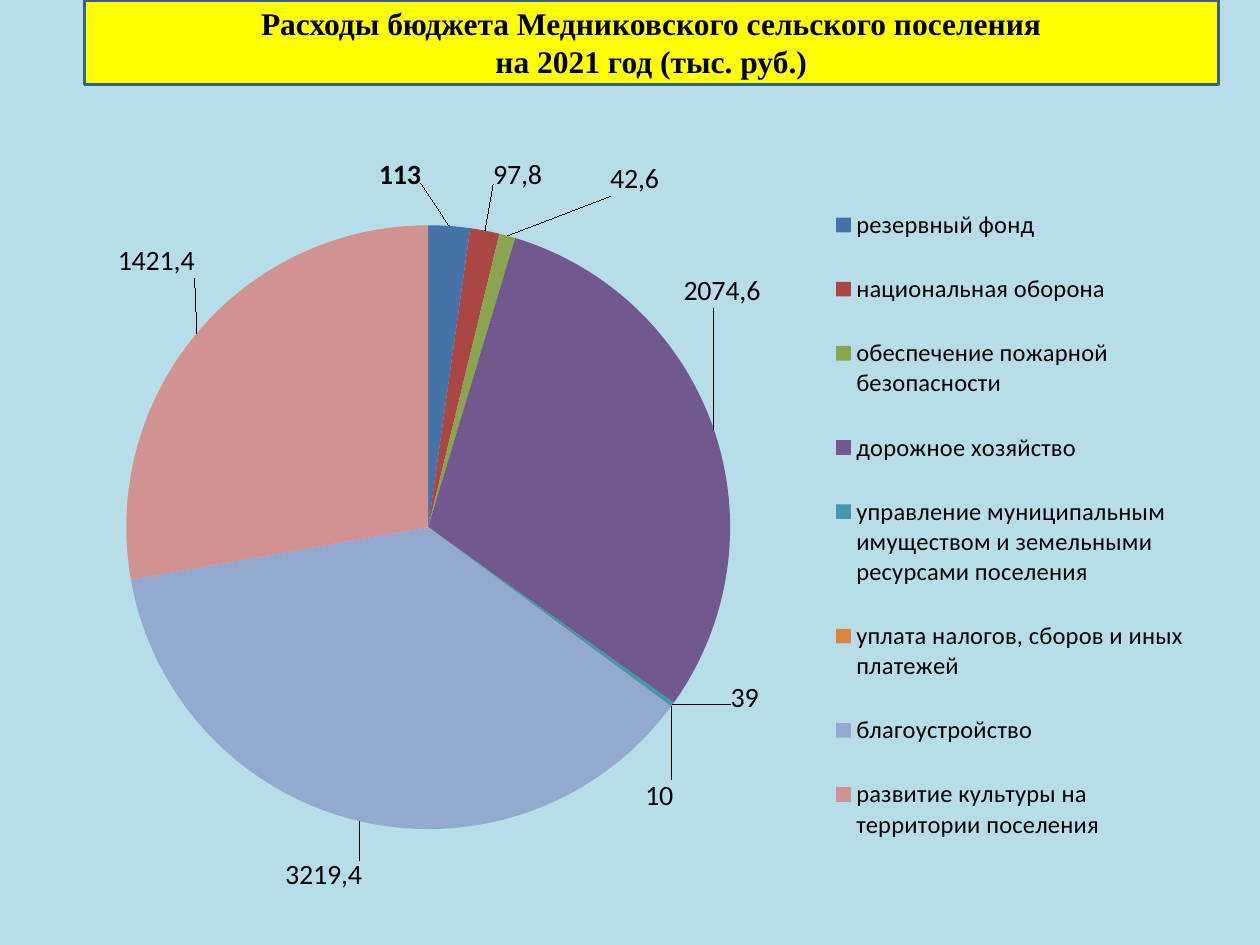
from dataclasses import dataclass

from pptx import Presentation
from pptx import util as u
from pptx.chart import data
from pptx.dml import color
from pptx.enum import chart as kinds, text
from pptx.oxml import xmlchemy as xml


@dataclass
class Theme:
    back: str = "B7DEE8"
    band: str = "FFFF00"
    edge: str = "3A5F8C"
    ink: str = "000000"
    head: str = "Times New Roman"
    body: str = "Calibri"
    title: int = 18
    label: int = 16
    key: int = 14
    base: int = 10


def rgb(code):
    return color.RGBColor.from_string(code)


def place(host, index, **parts):
    for old in host.xpath("c:layout"):
        host.remove(old)
    layout = xml.OxmlElement("c:layout")
    manual = xml.OxmlElement("c:manualLayout")
    for name, val in parts.items():
        item = xml.OxmlElement(f"c:{name}")
        item.set("val", val if isinstance(val, str) else f"{val / 100:.4f}")
        manual.append(item)
    layout.append(manual)
    host.insert(index, layout)


theme = Theme()
deck = Presentation()
deck.slide_width, deck.slide_height = u.Cm(25.4), u.Cm(19.05)
slide = deck.slides.add_slide(deck.slide_layouts[5])
slide.background.fill.solid()
slide.background.fill.fore_color.rgb = rgb(theme.back)

title = slide.shapes.title
title.left, title.top = u.Cm(1.7), u.Cm(0)
title.width, title.height = u.Cm(22.86), u.Cm(1.7)
geom = xml.OxmlElement("a:prstGeom")
geom.set("prst", "roundRect")
geom.append(xml.OxmlElement("a:avLst"))
title.element.spPr.append(geom)
title.fill.solid()
title.fill.fore_color.rgb = rgb(theme.band)
title.line.color.rgb = rgb(theme.edge)
title.line.width = u.Pt(2)
frame = title.text_frame
frame.text = "Расходы бюджета Медниковского сельского поселения\nна 2021 год (тыс. руб.)"
frame.word_wrap = True
frame.auto_size = text.MSO_AUTO_SIZE.NONE
frame.vertical_anchor = text.MSO_ANCHOR.MIDDLE
for para in frame.paragraphs:
    para.alignment = text.PP_ALIGN.CENTER
    para.space_before = u.Pt(0)
    font = para.runs[0].font
    font.name, font.size, font.bold = theme.head, u.Pt(theme.title), True
    font.color.rgb = rgb(theme.ink)

rows = [
    ("резервный фонд", 113, None, "4572A7", -4.4, -4.8),
    ("национальная оборона", 79.5, "97,8", "AA4643", 0.6, -5.3),
    ("обеспечение пожарной безопасности", 43.6, "42,6", "89A54E", 8.9, -4.4),
    ("дорожное хозяйство", 1535, "2074,6", "71588F", -3.3, -16.2),
    ("управление муниципальным имуществом и земельными ресурсами поселения",
     12, "39", "4198AF", 4.6, -3.7),
    ("уплата налогов, сборов и иных платежей", 1, "10", "DB843D", -2.8, 9.3),
    ("благоустройство", 1883.1, "3219,4", "93A9CF", 0.4, 4.4),
    ("развитие культуры на территории поселения", 1411, "1421,4", "D19392", 0.3, -6.8),
]
pie = data.CategoryChartData()
pie.categories = [row[0] for row in rows]
pie.add_series("Series 1", [row[1] for row in rows])
chart = slide.shapes.add_chart(
    kinds.XL_CHART_TYPE.PIE, u.Cm(1.27), u.Cm(3.18), u.Cm(22.86), u.Cm(14.81), pie
).chart
chart.has_title = False
chart.font.name, chart.font.size = theme.body, u.Pt(theme.base)
chart.font.color.rgb = rgb(theme.ink)
chart.has_legend = True
chart.legend.position = kinds.XL_LEGEND_POSITION.RIGHT
chart.legend.include_in_layout = False
chart.legend.font.size = u.Pt(theme.key)
area = chart.element.xpath("c:chart/c:plotArea")[0] if hasattr(chart, "element") else chart._chartSpace.xpath("c:chart/c:plotArea")[0]
place(area, 0, layoutTarget="inner", xMode="edge", yMode="edge",
      x=5.56, y=9.2, w=53.3, h=82.2)
place(area.getparent().xpath("c:legend")[0], 1, xMode="edge", yMode="edge",
      x=67, y=2.5, w=33, h=95)

plot = chart.plots[0]
plot.vary_by_categories = True
series = plot.series[0]
labels = series.data_labels
labels.show_value = True
labels.position = kinds.XL_LABEL_POSITION.OUTSIDE_END
labels.font.size, labels.font.bold = u.Pt(theme.label), True
for i, (name, value, shown, fill, x, y) in enumerate(rows):
    point = series.points[i]
    point.format.fill.solid()
    point.format.fill.fore_color.rgb = rgb(fill)
    label = point.data_label
    if shown:
        label.text_frame.text = shown
        font = label.text_frame.paragraphs[0].runs[0].font
    else:
        font = label.font
    font.name, font.size, font.bold = theme.body, u.Pt(theme.label), not shown
    font.color.rgb = rgb(theme.ink)
    label.position = kinds.XL_LABEL_POSITION.OUTSIDE_END
    tag = labels._element.xpath(f"c:dLbl[c:idx/@val='{i}']")[0]
    place(tag, 1, x=x, y=y)

deck.save("out.pptx")
